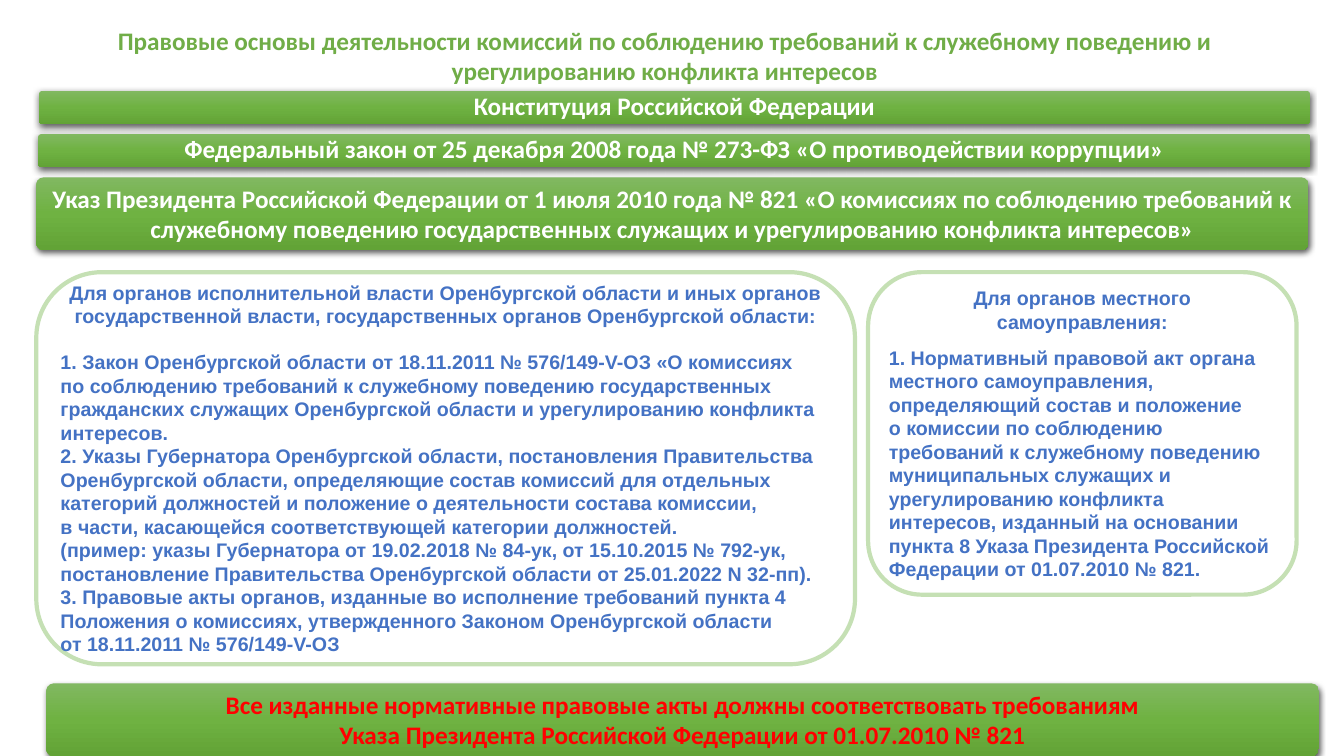
from lxml import etree
from pptx import Presentation
from pptx.dml.color import RGBColor
from pptx.enum.shapes import MSO_SHAPE
from pptx.enum.text import MSO_ANCHOR, PP_ALIGN
from pptx.oxml import parse_xml
from pptx.oxml.ns import qn
from pptx.util import Inches, Pt

GREEN, PALE_GREEN, BLUE, RED, WHITE = "70AD47", "C5E0B4", "4472C4", "FF0000", "FFFFFF"
BAR_GRADIENT = [(0, "81B861"), (50, "6FB242"), (100, "62A336")]
DRAWING_NS = "http://schemas.openxmlformats.org/drawingml/2006/main"


def color(hex_code):
    return RGBColor.from_string(hex_code)


def write(paragraph, text, font, size, hex_code, align):
    paragraph.alignment = align
    for number, line in enumerate(text.split("\n")):
        if number:
            paragraph.add_line_break()
        run = paragraph.add_run()
        run.text = line
        run.font.name = font
        run.font.size = Pt(size)
        run.font.bold = True
        run.font.color.rgb = color(hex_code)


def set_frame(frame, side, top, anchor):
    frame.word_wrap = True
    frame.margin_left = frame.margin_right = Inches(side)
    frame.margin_top = frame.margin_bottom = Inches(top)
    frame.vertical_anchor = anchor


def add_rounded(slide, box, rounding):
    shape = slide.shapes.add_shape(
        MSO_SHAPE.ROUNDED_RECTANGLE, *[Inches(length) for length in box])
    shape.adjustments[0] = rounding
    shape.shadow.inherit = False
    return shape


def paint_bar(bar):
    bar.fill.gradient()
    bar.fill.gradient_angle = 270
    properties = bar.fill._xPr
    stops = properties.find(".//" + qn("a:gsLst"))
    for stop in list(stops):
        stops.remove(stop)
    for position, hex_code in BAR_GRADIENT:
        stop = etree.SubElement(stops, qn("a:gs"), pos=str(position * 1000))
        etree.SubElement(stop, qn("a:srgbClr"), val=hex_code)
    bar.line.fill.background()
    properties.find(qn("a:effectLst")).append(parse_xml(
        f'<a:outerShdw xmlns:a="{DRAWING_NS}" blurRad="57150" dist="19050" '
        'dir="5400000" algn="ctr" rotWithShape="0">'
        '<a:srgbClr val="000000"><a:alpha val="63000"/></a:srgbClr></a:outerShdw>'))


def add_title(slide, box, text):
    title = slide.shapes.add_textbox(*[Inches(length) for length in box])
    set_frame(title.text_frame, 0.1, 0.05, MSO_ANCHOR.TOP)
    write(title.text_frame.paragraphs[0], text, "Calibri", 18, GREEN, PP_ALIGN.CENTER)


def add_bar(slide, box, text, text_color=WHITE, spacing=1.0):
    bar = add_rounded(slide, box, 0.1)
    paint_bar(bar)
    set_frame(bar.text_frame, 0.1, 0.05, MSO_ANCHOR.MIDDLE)
    paragraph = bar.text_frame.paragraphs[0]
    paragraph.line_spacing = spacing
    write(paragraph, text, "Calibri", 18, text_color, PP_ALIGN.CENTER)


def add_panel(slide, box, heading, heading_gap, acts):
    panel = add_rounded(slide, box, 0.167)
    panel.fill.background()
    panel.line.color.rgb = color(PALE_GREEN)
    panel.line.width = Pt(3)
    frame = panel.text_frame
    set_frame(frame, 0.05, 0.05, MSO_ANCHOR.MIDDLE)
    write(frame.paragraphs[0], heading, "Arial", 14, BLUE, PP_ALIGN.CENTER)
    frame.paragraphs[0].space_after = Pt(heading_gap)
    for act in acts:
        write(frame.add_paragraph(), act, "Arial", 14, BLUE, PP_ALIGN.LEFT)


def build_legal_basis(slide):
    add_title(slide, (0.46, 0.2, 12.27, 0.71),
              "Правовые основы деятельности комиссий по соблюдению требований "
              "к служебному поведению и урегулированию конфликта интересов")
    add_bar(slide, (0.39, 0.9, 12.6, 0.33), "Конституция Российской Федерации", spacing=0.9)
    add_panel(
        slide, (0.36, 2.7, 8.12, 3.89),
        "Для органов исполнительной власти Оренбургской области и иных органов "
        "государственной власти, государственных органов Оренбургской области:",
        16,
        ["1. Закон Оренбургской области от 18.11.2011 № 576/149-V-ОЗ «О комиссиях\n"
         "по соблюдению требований к служебному поведению государственных "
         "гражданских служащих Оренбургской области и урегулированию конфликта интересов.",
         "2. Указы Губернатора Оренбургской области, постановления Правительства "
         "Оренбургской области, определяющие состав комиссий для отдельных "
         "категорий должностей и положение о деятельности состава комиссии,\n"
         "в части, касающейся соответствующей категории должностей.",
         "(пример: указы Губернатора от 19.02.2018 № 84-ук, от 15.10.2015 № 792-ук, "
         "постановление Правительства Оренбургской области от 25.01.2022 N 32-пп).",
         "3. Правовые акты органов, изданные во исполнение требований пункта 4 "
         "Положения о комиссиях, утвержденного Законом Оренбургской области\n"
         "от 18.11.2011 № 576/149-V-ОЗ"])
    add_panel(
        slide, (8.61, 2.7, 4.25, 3.2),
        "Для органов местного самоуправления:",
        9,
        ["1. Нормативный правовой акт органа местного самоуправления, "
         "определяющий состав и положение\n"
         "о комиссии по соблюдению требований к служебному поведению "
         "муниципальных служащих и урегулированию конфликта интересов, изданный "
         "на основании пункта 8 Указа Президента Российской Федерации "
         "от 01.07.2010 № 821."])
    add_bar(slide, (0.38, 1.33, 12.62, 0.33),
            "Федеральный закон от 25 декабря 2008 года № 273-ФЗ "
            "«О противодействии коррупции»", spacing=0.9)
    add_bar(slide, (0.36, 1.76, 12.62, 0.72),
            "Указ Президента Российской Федерации от 1 июля 2010 года № 821 "
            "«О комиссиях по соблюдению требований к служебному поведению "
            "государственных служащих и урегулированию конфликта интересов»")
    add_bar(slide, (0.46, 6.78, 12.62, 0.72),
            "Все изданные нормативные правовые акты должны соответствовать требованиям\n"
            "Указа Президента Российской Федерации от 01.07.2010 № 821", RED)


def main():
    presentation = Presentation()
    presentation.slide_width = Inches(13.33)
    presentation.slide_height = Inches(7.5)
    build_legal_basis(presentation.slides.add_slide(presentation.slide_layouts[6]))
    presentation.save("out.pptx")


if __name__ == "__main__":
    main()
